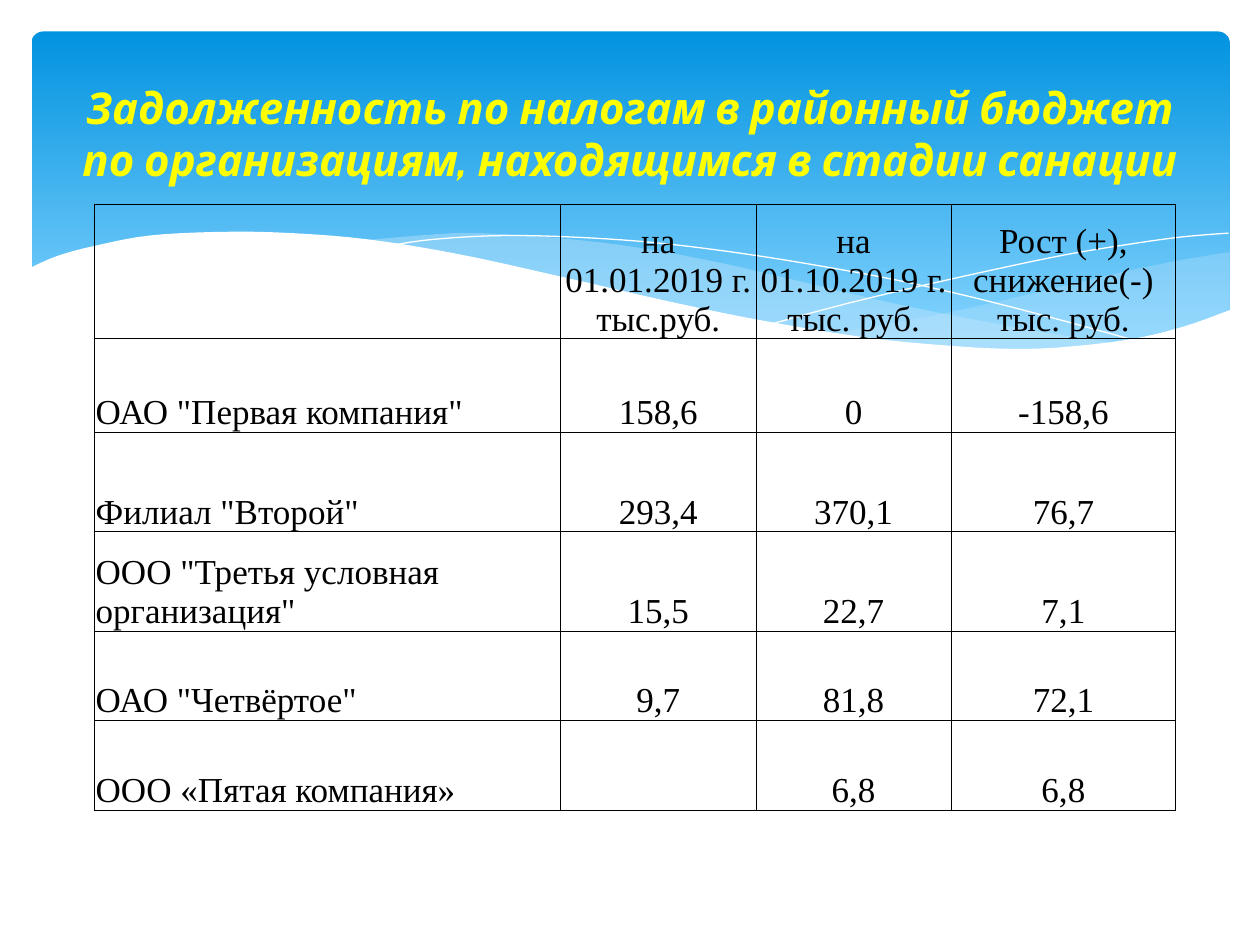
from dataclasses import dataclass
from lxml.etree import SubElement
from pptx import Presentation
from pptx.dml.color import RGBColor
from pptx.enum.shapes import MSO_SHAPE
from pptx.enum.text import MSO_ANCHOR, MSO_AUTO_SIZE, PP_ALIGN
from pptx.oxml import parse_xml
from pptx.oxml.ns import nsdecls, qn
from pptx.util import Pt


@dataclass(frozen=True)
class Theme:
    sky_top: str = "0293E0"
    sky_bottom: str = "83D3FE"
    wave: str = "C6E7FC"
    paper: str = "FFFFFF"
    title: str = "FFFF00"
    text: str = "000000"
    title_font: str = "Cabin"
    table_font: str = "Times New Roman"
    title_size: float = 25
    table_size: float = 20
    border: float = 0.5


THEME = Theme()
TITLE = "Задолженность по налогам в районный бюджет по организациям, находящимся в стадии санации"
COLUMN_WIDTHS = [266.4, 111.6, 111.6, 128.2]
ROW_HEIGHTS = [77, 53.3, 56.9, 56.9, 51.1, 51.1]
ROWS = [
    ["", "на 01.01.2019 г. тыс.руб.", "на 01.10.2019 г. тыс. руб.", "Рост (+), снижение(-) тыс. руб."],
    ['ОАО "Первая компания"', "158,6", "0", "-158,6"],
    ['Филиал "Второй"', "293,4", "370,1", "76,7"],
    ['ООО "Третья условная организация"', "15,5", "22,7", "7,1"],
    ['ОАО "Четвёртое"', "9,7", "81,8", "72,1"],
    ["ООО «Пятая компания»", "", "6,8", "6,8"],
]

RIGHT_WAVE_TOP = [(684.7, 126), (655, 131), (623.5, 137.5), (581, 147.6), (524, 160.6), (458, 172.8)]
RIGHT_WAVE_BOTTOM = [(458, 172.8), (489.6, 177), (527, 180.7), (560, 182), (597, 180.7),
                     (628, 176.4), (655, 170.6), (684.7, 159.8)]
LONG_WAVE_TOP = [(188, 119.5), (229.7, 116), (255.6, 115.2), (300, 118), (343.4, 123), (391.7, 131.8),
                 (435, 141.8), (490, 154.8), (540, 164.9), (584.6, 172.8), (625, 178.6)]
LONG_WAVE_BOTTOM = [(625, 178.6), (599, 181.4), (563, 182.2), (520.6, 180.7), (471.6, 175), (414.7, 165.6),
                    (363.6, 154.8), (305, 141.8), (257.8, 131), (214.6, 123), (188, 119.5)]
FALLING_LINE = [(204.5, 122.4), (229.7, 118.8), (270.7, 116.6), (319.7, 118), (365.8, 121.7),
                (419.8, 128.9), (482.4, 139.7), (529, 149.8), (580, 162.7), (635, 177.8)]
RISING_LINE = [(423.4, 167), (465.8, 155.5), (520.6, 142.6), (584, 128.9), (626.4, 121.7),
               (657.4, 117.4), (684, 115.2)]
PAPER_EDGE = [(685.4, 159), (658.8, 168.5), (629.3, 175.7), (594, 180), (564.5, 181.4), (530, 180),
              (477.4, 175), (416, 164.9), (363, 154), (303.8, 140.4), (244.8, 127.4), (192, 118.8),
              (147.6, 115.2), (109.4, 114.5), (67.7, 116.6), (36.7, 122.4), (15, 128.2), (-1.4, 135.4)]
PAPER_CORNERS = [(-1.4, 219), (685.4, 219)]


def color(value):
    return RGBColor.from_string(value)


def apply_format(target, values):
    for name, value in values.items():
        setattr(target, name, value)


def smooth_curve(points, steps=5):
    padded = [points[0], *points, points[-1]]
    curve = [points[0]]
    for before, start, end, after in zip(padded, padded[1:], padded[2:], padded[3:]):
        for step in range(1, steps + 1):
            t = step / steps
            curve.append(tuple(
                (2 * b + (c - a) * t + (2 * a - 5 * b + 4 * c - d) * t ** 2
                 + (3 * b - a - 3 * c + d) * t ** 3) / 2
                for a, b, c, d in zip(before, start, end, after)))
    return curve


def add_outline(slide, box, points, closed):
    left, top = box[:2]
    vertices = [(Pt(left + x), Pt(top + y)) for x, y in points]
    builder = slide.shapes.build_freeform(*vertices[0])
    builder.add_line_segments(vertices[1:], close=closed)
    shape = builder.convert_to_shape()
    shape.shadow.inherit = False
    return shape


def add_area(slide, box, points, fill_color, opacity=100):
    shape = add_outline(slide, box, points, True)
    shape.fill.solid()
    shape.fill.fore_color.rgb = color(fill_color)
    shape.line.fill.background()
    if opacity < 100:
        rgb = shape.element.spPr.find(f"{qn('a:solidFill')}/{qn('a:srgbClr')}")
        SubElement(rgb, qn("a:alpha"), val=str(opacity * 1000))


def add_curve(slide, box, points):
    shape = add_outline(slide, box, smooth_curve(points), False)
    shape.fill.background()
    shape.line.color.rgb = color(THEME.paper)
    shape.line.width = Pt(0)


def add_wave_header(slide, box):
    sky = slide.shapes.add_shape(MSO_SHAPE.ROUNDED_RECTANGLE, *map(Pt, box))
    sky.adjustments[0] = 0.034
    sky.shadow.inherit = False
    sky.line.fill.background()
    sky.fill.gradient()
    sky.fill.gradient_angle = 270
    stops = [(0, THEME.sky_top), (0.9, THEME.sky_bottom)]
    for stop, (position, value) in zip(sky.fill.gradient_stops, stops):
        stop.position = position
        stop.color.rgb = color(value)
    add_area(slide, box, smooth_curve(RIGHT_WAVE_TOP) + smooth_curve(RIGHT_WAVE_BOTTOM), THEME.wave, 29)
    add_area(slide, box, smooth_curve(LONG_WAVE_TOP) + smooth_curve(LONG_WAVE_BOTTOM), THEME.wave, 40)
    add_curve(slide, box, FALLING_LINE)
    add_curve(slide, box, RISING_LINE)
    add_area(slide, box, smooth_curve(PAPER_EDGE) + PAPER_CORNERS, THEME.paper)


def add_borders(cell):
    properties = cell._tc.get_or_add_tcPr()
    for index, side in enumerate(("lnL", "lnR", "lnT", "lnB")):
        properties.insert(index, parse_xml(
            f'<a:{side} {nsdecls("a")} w="{Pt(THEME.border)}"><a:solidFill>'
            f'<a:srgbClr val="{THEME.text}"/></a:solidFill></a:{side}>'))


def add_debt_table(slide, box):
    table = slide.shapes.add_table(len(ROWS), len(COLUMN_WIDTHS), *map(Pt, box)).table
    apply_format(table, {"first_row": False, "horz_banding": False})
    for column, width in zip(table.columns, COLUMN_WIDTHS):
        column.width = Pt(width)
    cell_format = {"vertical_anchor": MSO_ANCHOR.BOTTOM, "margin_left": Pt(0.7), "margin_right": Pt(0.7),
                   "margin_top": Pt(0.7), "margin_bottom": Pt(0)}
    font_format = {"size": Pt(THEME.table_size), "name": THEME.table_font}
    for row, height, texts in zip(table.rows, ROW_HEIGHTS, ROWS):
        row.height = Pt(height)
        for index, (cell, text) in enumerate(zip(row.cells, texts)):
            cell.text = text
            apply_format(cell, cell_format)
            cell.fill.background()
            add_borders(cell)
            paragraph = cell.text_frame.paragraphs[0]
            paragraph.alignment = PP_ALIGN.CENTER if index else PP_ALIGN.LEFT
            apply_format(paragraph.font, font_format)
            paragraph.font.color.rgb = color(THEME.text)


def place_title(slide, box):
    title = slide.shapes.title
    apply_format(title, dict(zip(("left", "top", "width", "height"), map(Pt, box))))
    title.text = TITLE
    apply_format(title.text_frame, {"word_wrap": True, "auto_size": MSO_AUTO_SIZE.NONE,
                                    "vertical_anchor": MSO_ANCHOR.MIDDLE})
    paragraph = title.text_frame.paragraphs[0]
    paragraph.alignment = PP_ALIGN.CENTER
    font = paragraph.runs[0].font
    apply_format(font, {"size": Pt(THEME.title_size), "name": THEME.title_font, "bold": True, "italic": True})
    font.color.rgb = color(THEME.title)
    title.element.getparent().append(title.element)


def main():
    presentation = Presentation()
    apply_format(presentation, {"slide_width": Pt(720), "slide_height": Pt(540)})
    slide = presentation.slides.add_slide(presentation.slide_layouts[5])
    add_wave_header(slide, (18, 18, 684.7, 194.4))
    add_debt_table(slide, (54, 116.6, sum(COLUMN_WIDTHS), sum(ROW_HEIGHTS)))
    place_title(slide, (36, 26.6, 648, 98.6))
    presentation.save("out.pptx")


if __name__ == "__main__":
    main()
